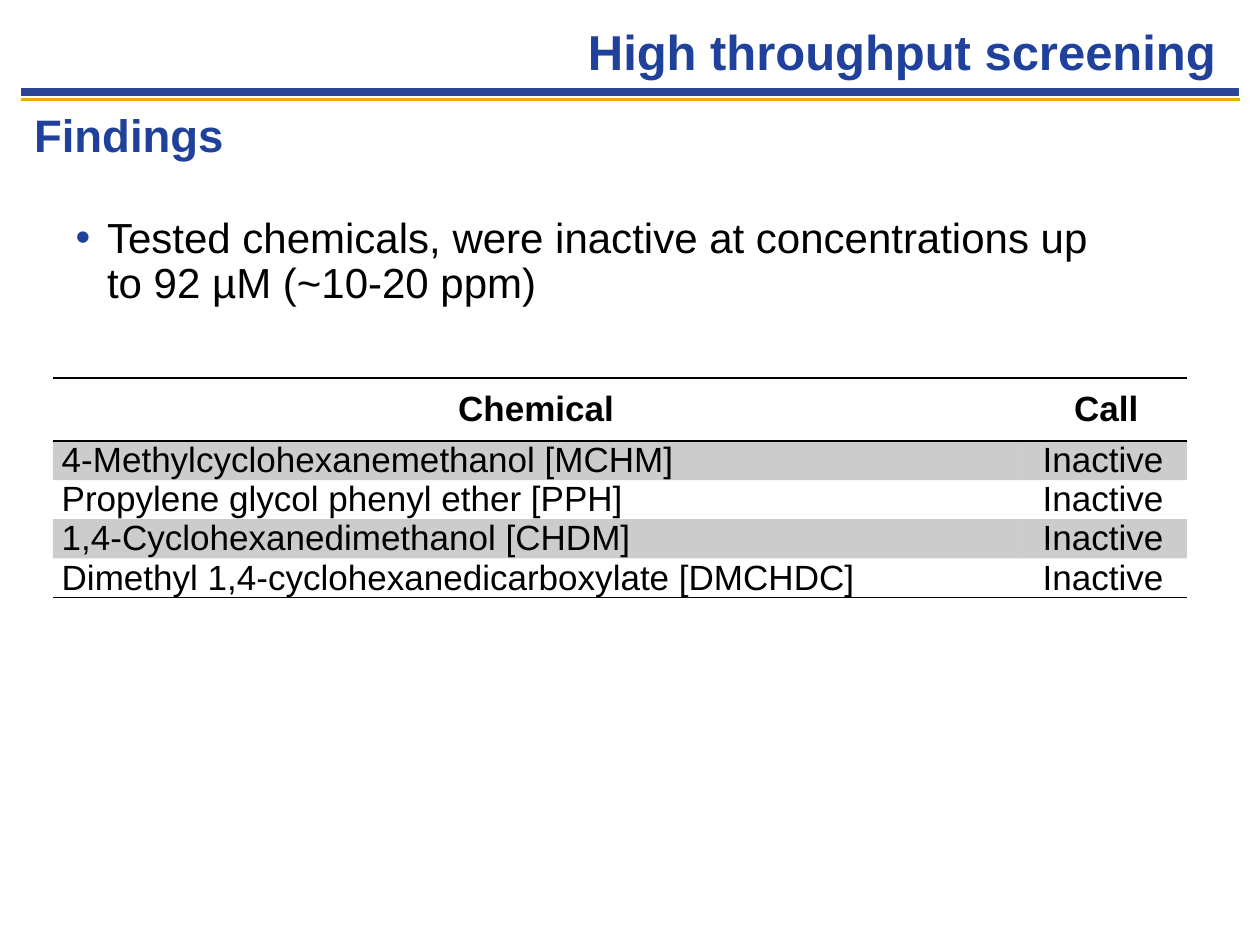
from lxml import etree
from pptx import Presentation
from pptx import util as u
from pptx.dml.color import RGBColor
from pptx.enum import shapes, text
from pptx.oxml import parse_xml
from pptx.oxml.ns import nsdecls, qn

BLUE, BLACK = "1F419B", "000000"
PLAIN_TABLE = "{2D5ABB26-0587-4C30-8999-92F81FD0307C}"
ALIGN = text.PP_ALIGN
ANCHOR = text.MSO_ANCHOR


def colour(value):
    return RGBColor.from_string(value)


def apply(target, formats):
    for name, value in formats.items():
        setattr(target, name, value)


def style_font(font, size, value, bold=False):
    apply(font, {"name": "Arial", "size": u.Pt(size), "bold": bold})
    font.color.rgb = colour(value)


def place(shape, box):
    lengths = [u.Inches(length) for length in box]
    apply(shape, dict(zip(("left", "top", "width", "height"), lengths)))


def add_rule(page, start, end, value, width):
    points = [u.Inches(length) for length in (*start, *end)]
    rule = page.shapes.add_connector(shapes.MSO_CONNECTOR.STRAIGHT, *points)
    rule.line.color.rgb = colour(value)
    rule.line.width = u.Pt(width)
    etree.SubElement(rule._element.spPr, qn("a:effectLst"))


def fill_placeholder(shape, box, words, size, value, bold, anchor):
    place(shape, box)
    frame = shape.text_frame
    frame.text = words
    apply(frame, {"word_wrap": True, "vertical_anchor": anchor,
                  "auto_size": text.MSO_AUTO_SIZE.NONE})
    para = frame.paragraphs[0]
    style_font(para.runs[0].font, size, value, bold)
    return para


def add_title(page, box, words):
    para = fill_placeholder(page.shapes.title, box, words, 28, BLUE, True, ANCHOR.BOTTOM)
    para.alignment = ALIGN.RIGHT


def add_list(shape, box, words, size, value, bold, bullet):
    para = fill_placeholder(shape, box, words, size, value, bold, ANCHOR.TOP)
    properties = para._p.get_or_add_pPr()
    indent = u.Inches(0.25)
    properties.set("marL", str(indent))
    properties.set("indent", str(-indent))
    if bullet:
        tint = etree.SubElement(properties, qn("a:buClr"))
        etree.SubElement(tint, qn("a:srgbClr"), val=BLUE)
        etree.SubElement(properties, qn("a:buChar"), char=bullet)
    else:
        etree.SubElement(properties, qn("a:buNone"))
    apply(para, {"line_spacing": 0.9, "space_before": u.Pt(0)})


def add_border(cell, side):
    cell._tc.get_or_add_tcPr().append(parse_xml(
        f'<a:ln{side} {nsdecls("a")} w="{u.Pt(1)}"><a:solidFill>'
        f'<a:srgbClr val="{BLACK}"/></a:solidFill></a:ln{side}>'))


def shade(cell):
    cell.fill.solid()
    cell.fill.fore_color.rgb = colour(BLACK)
    tint = cell._tc.tcPr.find(".//" + qn("a:srgbClr"))
    etree.SubElement(tint, qn("a:alpha"), val="20000")


def fill_cell(cell, words, sides, bold, centred, shaded):
    side_margin = u.Inches(0.07)
    apply(cell, {"text": words, "vertical_anchor": ANCHOR.MIDDLE,
                 "margin_left": side_margin, "margin_right": side_margin,
                 "margin_top": 0, "margin_bottom": 0})
    para = cell.text_frame.paragraphs[0]
    para.alignment = ALIGN.CENTER if centred else ALIGN.LEFT
    style_font(para.runs[0].font, 20, BLACK, bold)
    for side in sides:
        add_border(cell, side)
    if shaded:
        shade(cell)
    else:
        cell.fill.background()


def add_results(page, box, rows, widths, heights):
    lengths = [u.Inches(length) for length in box]
    table = page.shapes.add_table(len(rows), len(widths), *lengths).table
    apply(table, {"first_row": False, "horz_banding": False})
    table._tbl.tblPr.find(qn("a:tableStyleId")).text = PLAIN_TABLE
    for column, width in zip(table.columns, widths):
        column.width = u.Inches(width)
    for row, height in zip(table.rows, heights):
        row.height = u.Inches(height)
    borders = {0: "TB", len(rows) - 1: "B"}
    for r, row in enumerate(rows):
        for c, words in enumerate(row):
            fill_cell(table.cell(r, c), words, borders.get(r, ""),
                      bold=r == 0, centred=r == 0 or c == 1, shaded=r % 2 == 1)
    table.cell(0, 1).text_frame.paragraphs[0]._p.pPr.set("marL", str(u.Inches(0.05)))


def main():
    deck = Presentation()
    apply(deck, {"slide_width": u.Inches(10), "slide_height": u.Inches(7.5)})
    page = deck.slides.add_slide(deck.slide_layouts[3])
    add_rule(page, (0.17, 0.79), (9.84, 0.79), "EAAC0C", 2.25)
    add_rule(page, (0.17, 0.73), (9.83, 0.73), "2E4496", 4.5)
    add_title(page, (1.42, 0, 8.33, 0.69), "High throughput screening")
    add_list(page.placeholders[1], (0.17, 0.85, 8.92, 0.42), "Findings",
             26, BLUE, True, None)
    add_list(page.placeholders[2], (0.5, 1.67, 8.5, 5.25),
             "Tested chemicals, were inactive at concentrations up to 92 µM (~10-20 ppm)",
             24, BLACK, False, "•")
    chemicals = ["4-Methylcyclohexanemethanol [MCHM]",
                 "Propylene glycol phenyl ether [PPH]",
                 "1,4-Cyclohexanedimethanol [CHDM]",
                 "Dimethyl 1,4-cyclohexanedicarboxylate [DMCHDC]"]
    rows = [("Chemical", "Call")] + [(name, "Inactive") for name in chemicals]
    add_results(page, (0.42, 3, 9, 1.74), rows, (7.67, 1.33),
                [0.5] + [0.31] * len(chemicals))
    deck.save("out.pptx")


if __name__ == "__main__":
    main()
